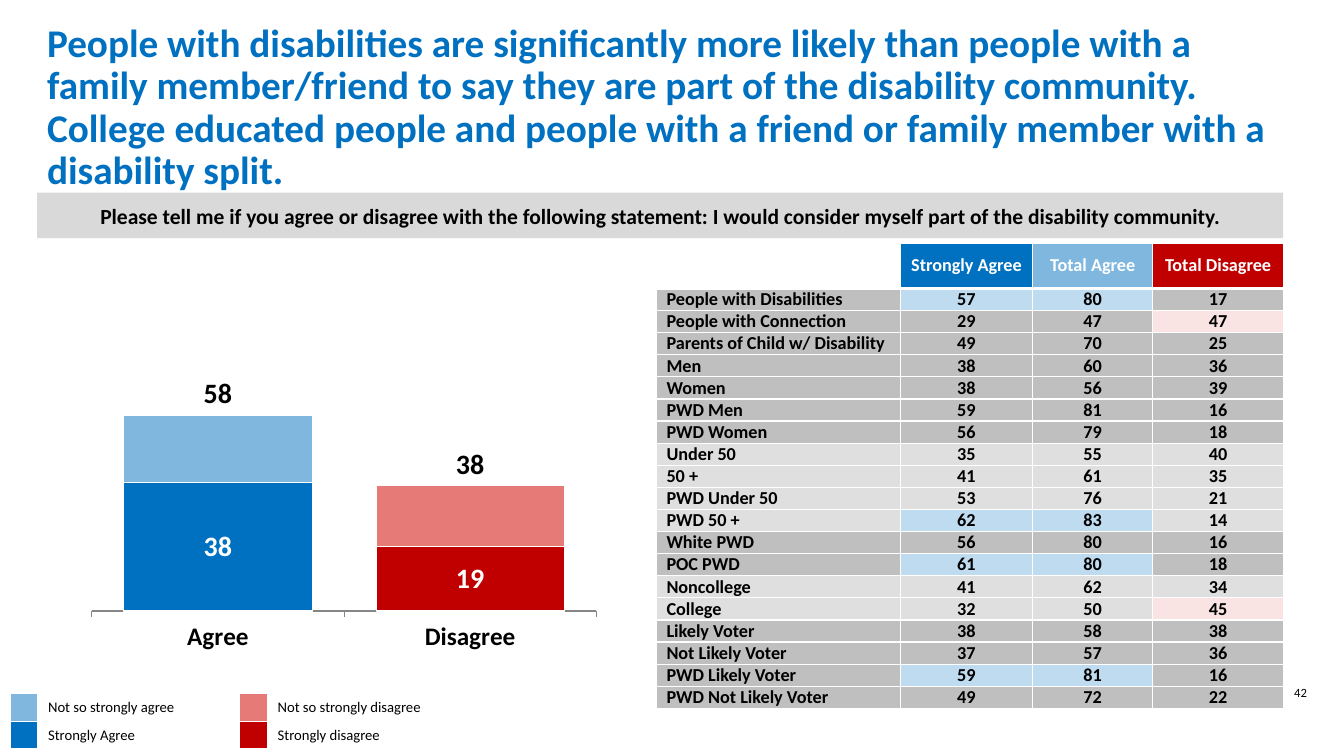
"""Build the disability community survey slide."""
from dataclasses import dataclass
from typing import Any, NamedTuple, Optional

from lxml import etree
from pptx import Presentation
from pptx.chart import data
from pptx.dml import color
from pptx.enum import chart as charts, shapes, text
from pptx.oxml import ns
from pptx.util import Pt


@dataclass(frozen=True)
class Theme:
    font: str = "Calibri"
    black: str = "000000"
    white: str = "FFFFFF"
    blue: str = "0070C0"
    sky: str = "7FB7DF"
    pale: str = "BFDBEF"
    red: str = "C00000"
    coral: str = "E57A77"
    rose: str = "F9E4E3"
    dark: str = "BFBFBF"
    light: str = "DFDFDF"
    bar: str = "D9D9D9"
    axis: str = "868686"
    title: float = 28
    ask: float = 15.4
    value: float = 20
    label: float = 18
    base: float = 14
    grid: float = 13
    key: float = 10.5
    page: float = 9


T = Theme()
MID = text.PP_ALIGN.CENTER
LEFT = text.PP_ALIGN.LEFT


class Box(NamedTuple):
    x: float
    y: float
    w: float
    h: float

    def pts(self) -> list[Pt]:
        return [Pt(n) for n in self]


class Style(NamedTuple):
    size: float
    ink: str = T.black
    bold: bool = False
    align: Any = LEFT


class Cell(NamedTuple):
    words: str
    style: Style
    fill: Optional[str] = None
    pad: float = 3.6
    base: float = 1


class Group(NamedTuple):
    name: str
    vals: tuple[int, int, int]
    fill: str
    hot: tuple[int, ...] = ()


class Stack(NamedTuple):
    name: str
    vals: tuple[int, int]
    fills: tuple[str, ...]
    ink: Optional[str] = None
    spot: Any = charts.XL_LABEL_POSITION.CENTER


AGREE, SPLIT = (1, 2), (3,)
GROUPS = [
    Group("People with Disabilities", (57, 80, 17), T.dark, AGREE),
    Group("People with Connection", (29, 47, 47), T.dark, SPLIT),
    Group("Parents of Child w/ Disability", (49, 70, 25), T.dark),
    Group("Men", (38, 60, 36), T.dark),
    Group("Women", (38, 56, 39), T.dark),
    Group("PWD Men", (59, 81, 16), T.dark),
    Group("PWD Women", (56, 79, 18), T.dark),
    Group("Under 50", (35, 55, 40), T.light),
    Group("50 +", (41, 61, 35), T.light),
    Group("PWD Under 50", (53, 76, 21), T.light),
    Group("PWD 50 +", (62, 83, 14), T.light, AGREE),
    Group("White PWD", (56, 80, 16), T.dark),
    Group("POC PWD", (61, 80, 18), T.dark, AGREE),
    Group("Noncollege", (41, 62, 34), T.light),
    Group("College", (32, 50, 45), T.light, SPLIT),
    Group("Likely Voter", (38, 58, 38), T.dark),
    Group("Not Likely Voter", (37, 57, 36), T.dark),
    Group("PWD Likely Voter", (59, 81, 16), T.dark, AGREE),
    Group("PWD Not Likely Voter", (49, 72, 22), T.dark),
]
HEADS = [("", T.white), ("Strongly Agree", T.blue),
         ("Total Agree", T.sky), ("Total Disagree", T.red)]
KEYS = [
    [(T.sky, "Not so strongly agree"), (T.coral, "Not so strongly disagree")],
    [(T.blue, "Strongly Agree"), (T.red, "Strongly disagree")],
]
STACKS = [
    Stack("Strongly", (38, 19), (T.blue, T.red), T.white),
    Stack("Not so strongly", (20, 18), (T.sky, T.coral)),
    Stack("Total", (58, 38), (), T.black, charts.XL_LABEL_POSITION.INSIDE_BASE),
]


def rgb(code: str) -> color.RGBColor:
    return color.RGBColor.from_string(code)


def ink(font: Any, style: Style) -> None:
    font.name, font.size, font.bold = T.font, Pt(style.size), style.bold
    font.color.rgb = rgb(style.ink)


def write(frame: Any, words: str, style: Style) -> Any:
    para = frame.paragraphs[0]
    para.alignment = style.align
    if words:
        run = para.add_run()
        run.text = words
        ink(run.font, style)
    else:
        end = etree.SubElement(para._p, ns.qn("a:endParaRPr"))
        end.set("sz", str(int(style.size * 100)))
    return para


def label(slide: Any, box: Box, words: str, style: Style, anchor: Any) -> Any:
    frame = slide.shapes.add_textbox(*box.pts()).text_frame
    frame.word_wrap = True
    frame.vertical_anchor = anchor
    return write(frame, words, style)


def edge(cell: Any, base: float) -> None:
    props = cell._tc.get_or_add_tcPr()
    for side, width in zip("LRTB", (1, 1, 1, base)):
        line = etree.SubElement(props, ns.qn(f"a:ln{side}"), w=str(Pt(width)))
        fill = etree.SubElement(line, ns.qn("a:solidFill"))
        etree.SubElement(fill, ns.qn("a:srgbClr"), val=T.white)


def table(slide: Any, x: float, y: float, cols: list[float],
          rows: list[float], cells: list[list[Cell]]) -> None:
    box = Box(x, y, sum(cols), sum(rows))
    grid = slide.shapes.add_table(len(rows), len(cols), *box.pts()).table
    grid.first_row = grid.horz_banding = False
    for col, width in zip(grid.columns, cols):
        col.width = Pt(width)
    for r, (high, line) in enumerate(zip(rows, cells)):
        grid.rows[r].height = Pt(high)
        for c, item in enumerate(line):
            cell = grid.cell(r, c)
            cell.margin_top = cell.margin_bottom = Pt(item.pad)
            cell.vertical_anchor = text.MSO_ANCHOR.MIDDLE
            edge(cell, item.base)
            if item.fill:
                cell.fill.solid()
                cell.fill.fore_color.rgb = rgb(item.fill)
            else:
                cell.fill.background()
            write(cell.text_frame, item.words, item.style)


def line(group: Group) -> list[Cell]:
    name = Style(T.grid, bold=True)
    mid = name._replace(align=MID)
    cells = [Cell(group.name, name, group.fill, 0)]
    for col, val in enumerate(group.vals, 1):
        glow = T.rose if col in SPLIT else T.pale
        fill = glow if col in group.hot else group.fill
        cells.append(Cell(str(val), mid, fill, 0))
    return cells


def trim(fmt: Any) -> None:
    fmt.line.color.rgb = rgb(T.white)
    fmt.line.width = Pt(0.75)


def plot(slide: Any, box: Box) -> None:
    source = data.CategoryChartData()
    source.categories = ["Agree", "Disagree"]
    for stack in STACKS:
        source.add_series(stack.name, stack.vals)
    kind = charts.XL_CHART_TYPE.COLUMN_STACKED
    graph = slide.shapes.add_chart(kind, *box.pts(), source).chart
    graph.has_legend = graph.has_title = False
    ink(graph.font, Style(T.base))
    axis = graph.value_axis
    axis.minimum_scale, axis.maximum_scale = 0, 100
    axis.has_major_gridlines = axis.visible = False
    axis = graph.category_axis
    axis.major_tick_mark = charts.XL_TICK_MARK.OUTSIDE
    axis.format.line.color.rgb = rgb(T.axis)
    ink(axis.tick_labels.font, Style(T.label, bold=True))
    bars = graph.plots[0]
    bars.gap_width, bars.overlap, bars.vary_by_categories = 34, 100, False
    for series, stack in zip(bars.series, STACKS):
        series.invert_if_negative = False
        series.format.fill.background()
        trim(series.format)
        for i, fill in enumerate(stack.fills):
            fmt = series.points[i].format
            fmt.fill.solid()
            fmt.fill.fore_color.rgb = rgb(fill)
            trim(fmt)
        if stack.ink:
            marks = series.data_labels
            marks.show_value, marks.position = True, stack.spot
            ink(marks.font, Style(T.value, stack.ink, True))
    area = graph._chartSpace.chart.plotArea
    for old in area.findall(ns.qn("c:layout")):
        area.remove(old)
    frame = etree.Element(ns.qn("c:layout"))
    area.insert(0, frame)
    spot = etree.SubElement(frame, ns.qn("c:manualLayout"))
    for tag, val in (("layoutTarget", "inner"), ("xMode", "edge"), ("yMode", "edge"),
                     ("x", "0.01"), ("y", "0.02"), ("w", "0.99"), ("h", "0.84")):
        etree.SubElement(spot, ns.qn(f"c:{tag}"), val=val)


def banner(slide: Any, box: Box, words: str) -> None:
    shape = slide.shapes.add_shape(shapes.MSO_SHAPE.RECTANGLE, *box.pts())
    shape.shadow.inherit = False
    shape.fill.solid()
    shape.fill.fore_color.rgb = rgb(T.bar)
    shape.line.fill.background()
    shape.text_frame.word_wrap = True
    shape.text_frame.vertical_anchor = text.MSO_ANCHOR.MIDDLE
    write(shape.text_frame, words, Style(T.ask, bold=True, align=MID))


def main() -> None:
    deck = Presentation()
    deck.slide_width, deck.slide_height = Pt(960), Pt(540)
    slide = deck.slides.add_slide(deck.slide_layouts[6])
    label(slide, Box(902, 486, 54, 24), "42", Style(T.page, align=MID),
          text.MSO_ANCHOR.TOP)
    plot(slide, Box(62, 189.4, 364.3, 287.3))
    key = Style(T.key)
    table(slide, 7.2, 495.4, [20, 144, 20, 151], [19.8] * 2,
          [[cell for fill, words in row
            for cell in (Cell("", key, fill), Cell(words, key))] for row in KEYS])
    head = Style(T.grid, T.white, True, MID)
    table(slide, 468.9, 173.6, [174.2, 94.4, 86, 93.2],
          [32.4] + [15.8] * len(GROUPS),
          [[Cell(words, head, fill, base=3) for words, fill in HEADS]]
          + [line(group) for group in GROUPS])
    banner(slide, Box(26.6, 137.6, 890, 32.6),
           "Please tell me if you agree or disagree with the following statement: "
           "I would consider myself part of the disability community.")
    title = label(slide, Box(26.6, 25.2, 907.2, 104.4),
                  "People with disabilities are significantly more likely than people "
                  "with a family member/friend to say they are part of the disability "
                  "community. College educated people and people with a friend or "
                  "family member with a disability split.",
                  Style(T.title, T.blue, True), text.MSO_ANCHOR.MIDDLE)
    title.line_spacing = 0.9
    deck.save("out.pptx")


if __name__ == "__main__":
    main()
